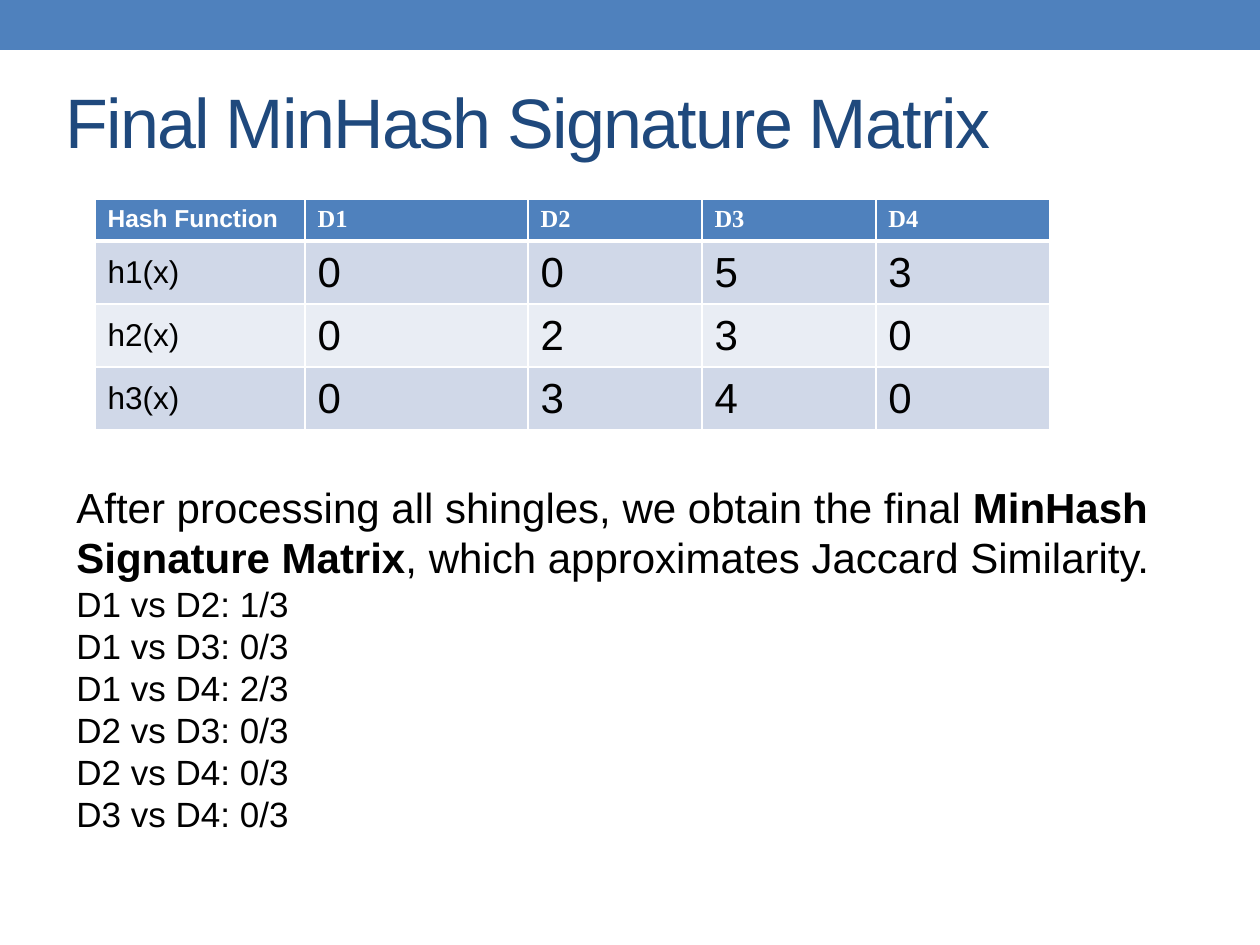
from dataclasses import dataclass

from lxml import etree
from pptx import Presentation
from pptx import util as u
from pptx.dml.color import RGBColor
from pptx.enum import shapes, text
from pptx.oxml.ns import qn

SCALE = u.Inches(1) / 126


def px(length):
    return u.Emu(round(length * SCALE))


@dataclass(frozen=True)
class Theme:
    accent: str = "4F81BD"
    heading: str = "1F497D"
    ink: str = "000000"
    paper: str = "FFFFFF"
    bands: tuple = ("D0D8E8", "E9EDF4")
    sans: str = "Arial"
    serif: str = "Times New Roman"
    title: int = 40
    large: int = 24
    medium: int = 20
    label: int = 18
    small: int = 14
    leading: float = 1.2
    rule: int = 1
    header_rule: int = 3


class Builder:
    def __init__(self, page, theme):
        self.page = page
        self.theme = theme

    def style(self, span, size, color, bold=False, font=None):
        span.font.name = font or self.theme.sans
        span.font.size = u.Pt(size)
        span.font.bold = bold
        span.font.color.rgb = RGBColor.from_string(color)

    def band(self, left, top, width, height):
        box = self.page.shapes.add_shape(
            shapes.MSO_SHAPE.RECTANGLE, px(left), px(top), px(width), px(height))
        box.shadow.inherit = False
        box.fill.solid()
        box.fill.fore_color.rgb = RGBColor.from_string(self.theme.accent)
        box.line.fill.background()

    def frame(self, left, top, width, height):
        box = self.page.shapes.add_textbox(px(left), px(top), px(width), px(height))
        box.text_frame.word_wrap = True
        return box.text_frame

    def title(self, wording, *place):
        frame = self.frame(*place)
        frame.vertical_anchor = text.MSO_ANCHOR.MIDDLE
        frame.text = wording
        span = frame.paragraphs[0].runs[0]
        self.style(span, self.theme.title, self.theme.heading)
        span.font._element.set("spc", "-100")

    def body(self, lead, lines, *place):
        frame = self.frame(*place)
        frame.text = "\n".join(["", *lines])
        first, *rest = frame.paragraphs
        for wording, bold in lead:
            span = first.add_run()
            span.text = wording
            self.style(span, self.theme.large, self.theme.ink, bold)
        first.line_spacing = u.Pt(self.theme.large * self.theme.leading)
        for para in rest:
            self.style(para.runs[0], self.theme.medium, self.theme.ink)
            para.line_spacing = u.Pt(self.theme.medium * self.theme.leading)

    def borders(self, cell, top, bottom):
        properties = cell._tc.get_or_add_tcPr()
        rule = self.theme.rule
        for side, weight in (("L", rule), ("R", rule), ("T", top), ("B", bottom)):
            line = etree.SubElement(properties, qn(f"a:ln{side}"), w=str(u.Pt(weight)))
            fill = etree.SubElement(line, qn("a:solidFill"))
            etree.SubElement(fill, qn("a:srgbClr"), val=self.theme.paper)

    def cell(self, cell, wording, row, column):
        theme = self.theme
        header = row == 0
        self.borders(cell,
                     theme.header_rule if row == 1 else theme.rule,
                     theme.header_rule if header else theme.rule)
        cell.fill.solid()
        cell.fill.fore_color.rgb = RGBColor.from_string(
            theme.accent if header else theme.bands[(row - 1) % 2])
        cell.text_frame.text = wording
        span = cell.text_frame.paragraphs[0].runs[0]
        if header:
            self.style(span, theme.small, theme.paper, True,
                       theme.serif if column else theme.sans)
        else:
            cell.vertical_anchor = text.MSO_ANCHOR.MIDDLE
            self.style(span, theme.large if column else theme.label, theme.ink)

    def table(self, left, top, widths, heights, values):
        table = self.page.shapes.add_table(
            len(heights), len(widths), px(left), px(top),
            px(sum(widths)), px(sum(heights))).table
        for column, width in zip(table.columns, widths):
            column.width = px(width)
        for row, height in zip(table.rows, heights):
            row.height = px(height)
        for row, record in enumerate(values):
            for column, wording in enumerate(record):
                self.cell(table.cell(row, column), wording, row, column)


def main():
    deck = Presentation()
    deck.slide_width, deck.slide_height = px(1260), px(945)
    page = deck.slides.add_slide(deck.slide_layouts[6])
    builder = Builder(page, Theme())

    builder.band(0, 0, 1260, 50)
    builder.title("Final MinHash Signature Matrix", 53, 53, 1134, 136)
    builder.body(
        [("After processing all shingles, we obtain the final ", False),
         ("MinHash Signature Matrix", True),
         (", which approximates Jaccard Similarity.", False)],
        ["D1 vs D2: 1/3", "D1 vs D3: 0/3", "D1 vs D4: 2/3",
         "D2 vs D3: 0/3", "D2 vs D4: 0/3", "D3 vs D4: 0/3"],
        64, 475, 1166, 369)
    builder.table(
        95, 199, [210, 223, 174, 174, 174], [42, 63, 63, 63],
        [["Hash Function", "D1", "D2", "D3", "D4"],
         ["h1(x)", "0", "0", "5", "3"],
         ["h2(x)", "0", "2", "3", "0"],
         ["h3(x)", "0", "3", "4", "0"]])
    deck.save("out.pptx")


if __name__ == "__main__":
    main()
